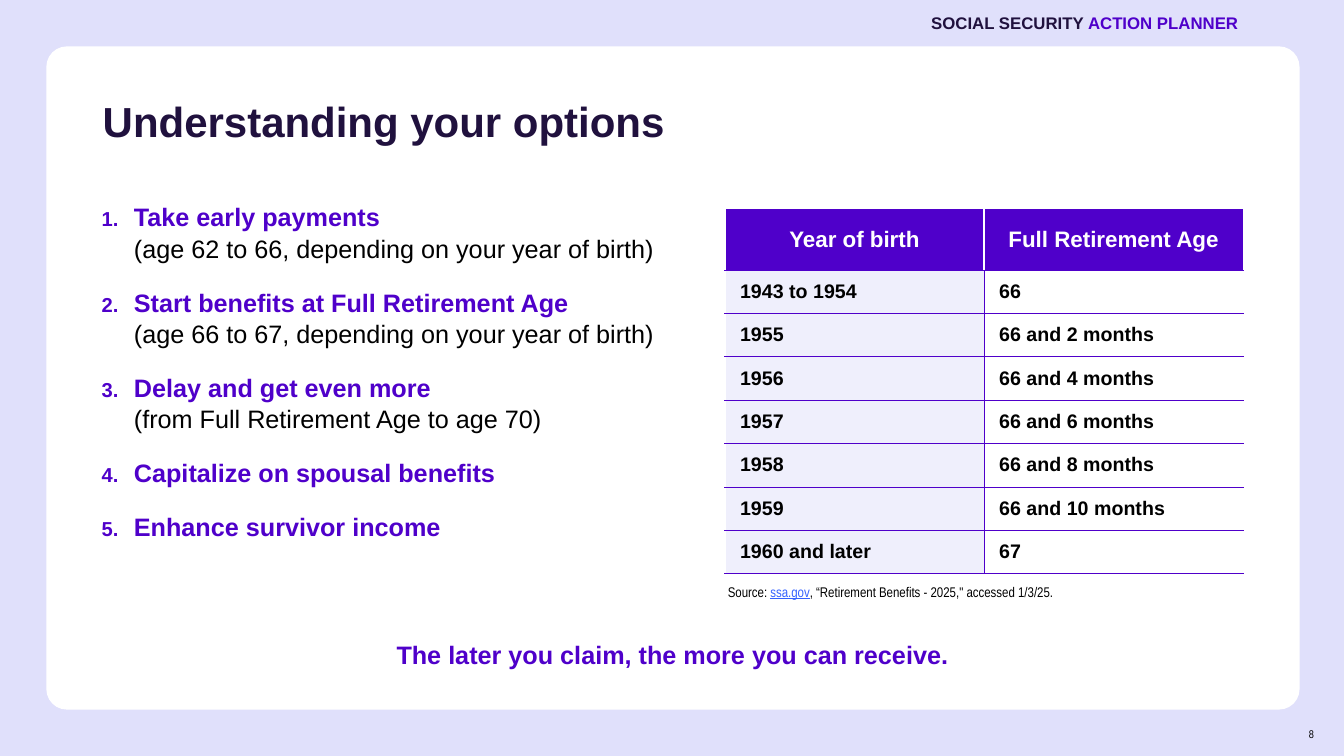
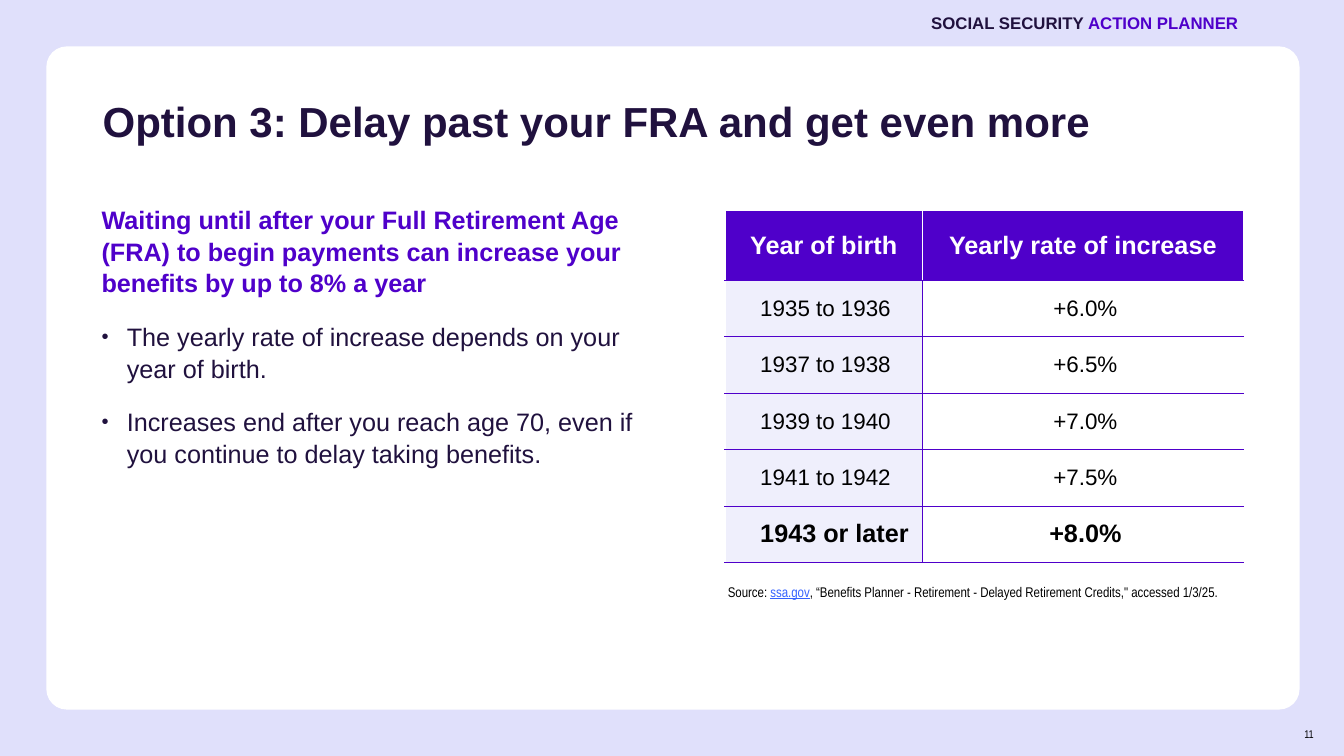
import pptx
import pptx.dml.color
import pptx.enum.shapes
import pptx.enum.text
import pptx.oxml.ns
import pptx.util
import lxml.etree

Inches = pptx.util.Inches
Pt = pptx.util.Pt
ALIGN = pptx.enum.text.PP_ALIGN
ANCHOR = pptx.enum.text.MSO_ANCHOR
qn = pptx.oxml.ns.qn

COLORS = {
    "lavender": "E0E0FB",
    "white": "FFFFFF",
    "ink": "20113E",
    "purple": "4F00CA",
    "black": "000000",
    "link": "3461FF",
}


def write(paragraph, runs, size, font="Arial", align=ALIGN.LEFT):
    """Fill a paragraph with (text, color, bold) runs."""
    paragraph.alignment = align
    paragraph.font.name = font
    paragraph.font.size = Pt(size)
    for text, color, bold in runs:
        if len(runs) == 1:
            paragraph.text = text
            target = paragraph.font
        else:
            run = paragraph.add_run()
            run.text = text
            target = run.font
        target.bold = bold
        target.color.rgb = pptx.dml.color.RGBColor.from_string(COLORS[color])
        if color == "link":
            target.underline = True


def add_text(slide, box, anchor=ANCHOR.MIDDLE):
    """Add a wrapping text box and return its text frame."""
    frame = slide.shapes.add_textbox(*[Inches(value) for value in box]).text_frame
    frame.word_wrap = True
    frame.vertical_anchor = anchor
    return frame


# Content: each body item is (list mark, runs)
slides = [
    {
        "title": "Understanding your options",
        "number": "8",
        "body_box": (0.91, 1.94, 5.99, 3.32),
        "indent": 0.32,
        "body": [
            ("number", [("Take early payments", "purple", True),
                        ("(age 62 to 66, depending on your year of birth)", "black", False)]),
            ("number", [("Start benefits at Full Retirement Age", "purple", True),
                        ("(age 66 to 67, depending on your year of birth)", "black", False)]),
            ("number", [("Delay and get even more", "purple", True),
                        ("(from Full Retirement Age to age 70)", "black", False)]),
            ("number", [("Capitalize on spousal benefits", "purple", True)]),
            ("number", [("Enhance survivor income", "purple", True)]),
        ],
        "table_top": 2.07,
        "columns": (2.57, 2.57),
        "heights": (0.61, 0.43),
        "sizes": (16, 14, 14),
        "bold_rows": True,
        "left_inset": 0.15,
        "value_align": ALIGN.LEFT,
        "rows": [
            ("Year of birth", "Full Retirement Age"),
            ("1943 to 1954", "66"),
            ("1955", "66 and 2 months"),
            ("1956", "66 and 4 months"),
            ("1957", "66 and 6 months"),
            ("1958", "66 and 8 months"),
            ("1959", "66 and 10 months"),
            ("1960 and later", "67"),
        ],
        "source": ", “Retirement Benefits - 2025,\" accessed 1/3/25.",
        "message": "The later you claim, the more you can receive.",
    },
    {
        "title": "Option 3: Delay past your FRA and get even more",
        "number": "11",
        "body_box": (0.91, 1.97, 5.76, 3.32),
        "indent": 0.25,
        "body": [
            (None, [("Waiting until after your Full Retirement Age (FRA) to begin payments "
                     "can increase your benefits by up to 8% a year", "purple", True)]),
            ("bullet", [("The yearly rate of increase depends on your year of birth.",
                         "ink", False)]),
            ("bullet", [("Increases end after you reach age 70, even if you continue to "
                         "delay taking benefits.", "ink", False)]),
        ],
        "table_top": 2.09,
        "columns": (1.96, 3.18),
        "heights": (0.69, 0.56),
        "sizes": (18, 16, 18),
        "bold_rows": False,
        "left_inset": 0.35,
        "value_align": ALIGN.CENTER,
        "rows": [
            ("Year of birth", "Yearly rate of increase"),
            ("1935 to 1936", "+6.0%"),
            ("1937 to 1938", "+6.5%"),
            ("1939 to 1940", "+7.0%"),
            ("1941 to 1942", "+7.5%"),
            ("1943 or later", "+8.0%"),
        ],
        "source": ", “Benefits Planner - Retirement - Delayed Retirement Credits,\" "
                  "accessed 1/3/25.",
        "message": None,
    },
]

presentation = pptx.Presentation()
presentation.slide_width = Inches(13.33)
presentation.slide_height = Inches(7.5)

# Shared background
background = presentation.slide_master.background.fill
background.solid()
background.fore_color.rgb = pptx.dml.color.RGBColor.from_string(COLORS["lavender"])

for content in slides:
    slide = presentation.slides.add_slide(presentation.slide_layouts[6])

    # White card
    card = slide.shapes.add_shape(
        pptx.enum.shapes.MSO_SHAPE.ROUNDED_RECTANGLE,
        Inches(0.46), Inches(0.46), Inches(12.43), Inches(6.58))
    card.adjustments[0] = 0.031
    card.shadow.inherit = False
    card.fill.solid()
    card.fill.fore_color.rgb = pptx.dml.color.RGBColor.from_string(COLORS["white"])
    card.line.fill.background()

    # Title, header and slide number
    title = add_text(slide, (0.92, 0.68, 11.88, 1.09)).paragraphs[0]
    title.line_spacing = 0.9
    write(title, [(content["title"], "ink", True)], 30)
    header = add_text(slide, (6.67, 0, 5.71, 0.45)).paragraphs[0]
    write(header, [("SOCIAL SECURITY", "ink", True), (" ACTION PLANNER", "purple", True)],
          12, align=ALIGN.RIGHT)
    number = add_text(slide, (12.43, 7.08, 0.7, 0.4)).paragraphs[0]
    write(number, [(content["number"], "black", False)], 8, "Arial Narrow", ALIGN.RIGHT)

    # Body list
    body = add_text(slide, content["body_box"], ANCHOR.TOP)
    for index, (mark, runs) in enumerate(content["body"]):
        paragraph = body.add_paragraph() if index else body.paragraphs[0]
        if mark:
            properties = paragraph._p.get_or_add_pPr()
            indent = Inches(content["indent"])
            properties.set("marL", str(indent))
            properties.set("indent", str(-indent))
            bullet_color = lxml.etree.SubElement(properties, qn("a:buClr"))
            lxml.etree.SubElement(bullet_color, qn("a:srgbClr"), val=COLORS[runs[0][1]])
            lxml.etree.SubElement(properties, qn("a:buSzPct"), val="80000")
            lxml.etree.SubElement(properties, qn("a:buFont"), typeface="Arial")
            if mark == "number":
                lxml.etree.SubElement(properties, qn("a:buAutoNum"), type="arabicPeriod")
            else:
                lxml.etree.SubElement(properties, qn("a:buChar"), char="•")
        paragraph.line_spacing = 1.04
        paragraph.space_before = Pt(10 if index else 0)
        paragraph.space_after = Pt(6)
        write(paragraph, runs, 18)
        if len(runs) == 2:
            paragraph.add_line_break()
            paragraph.runs[1]._r.addprevious(paragraph._p.find(qn("a:br")))

    # Table
    rows = content["rows"]
    header_height, row_height = content["heights"]
    header_size, row_size, last_size = content["sizes"]
    table = slide.shapes.add_table(
        len(rows), 2, Inches(7.19), Inches(content["table_top"]),
        Inches(sum(content["columns"])),
        Inches(header_height + row_height * (len(rows) - 1))).table
    table.horz_banding = False
    for column, width in zip(table.columns, content["columns"]):
        column.width = Inches(width)
    for row_index, row in enumerate(rows):
        is_header = row_index == 0
        is_last = row_index == len(rows) - 1
        table.rows[row_index].height = Inches(header_height if is_header else row_height)
        for column_index, text in enumerate(row):
            cell = table.cell(row_index, column_index)
            cell.vertical_anchor = ANCHOR.MIDDLE
            is_label = column_index == 0
            if is_header:
                color, size, bold, align = "white", header_size, True, ALIGN.CENTER
            else:
                color = "black"
                size = last_size if is_last else row_size
                bold = content["bold_rows"] or is_last
                align = ALIGN.LEFT if is_label else content["value_align"]
                cell.margin_left = Inches(content["left_inset"] if is_label else 0.15)
            write(cell.text_frame.paragraphs[0], [(text, color, bold)], size, align=align)

            # Borders come before the fill in the cell properties
            white, thin, hairline = ("white", 1), ("purple", 0.5), ("purple", 0.25)
            borders = {
                "a:lnL": white if is_header or is_label else thin,
                "a:lnR": thin if is_label and not is_header else white,
                "a:lnT": white if is_header else hairline if row_index == 1 else thin,
                "a:lnB": hairline if is_header else thin,
            }
            properties = cell._tc.get_or_add_tcPr()
            for side, (line_color, width) in borders.items():
                line = lxml.etree.SubElement(properties, qn(side), w=str(Pt(width)))
                line_fill = lxml.etree.SubElement(line, qn("a:solidFill"))
                lxml.etree.SubElement(line_fill, qn("a:srgbClr"), val=COLORS[line_color])
            fill = "purple" if is_header else "lavender" if is_label else "white"
            cell.fill.solid()
            cell.fill.fore_color.rgb = pptx.dml.color.RGBColor.from_string(COLORS[fill])
            if fill == "lavender":
                tint = properties.find(qn("a:solidFill")).find(qn("a:srgbClr"))
                lxml.etree.SubElement(tint, qn("a:alpha"), val="50000")

    # Source line and closing message
    source = add_text(slide, (7.12, 5.68, 5.24, 0.32), ANCHOR.BOTTOM).paragraphs[0]
    write(source, [("Source: ", "black", False), ("ssa.gov", "link", False),
                   (content["source"], "black", False)], 10, "Arial Narrow")
    if content["message"]:
        message = add_text(slide, (1.01, 6.17, 11.32, 0.64)).paragraphs[0]
        write(message, [(content["message"], "purple", True)], 18, align=ALIGN.CENTER)

presentation.save("out.pptx")
